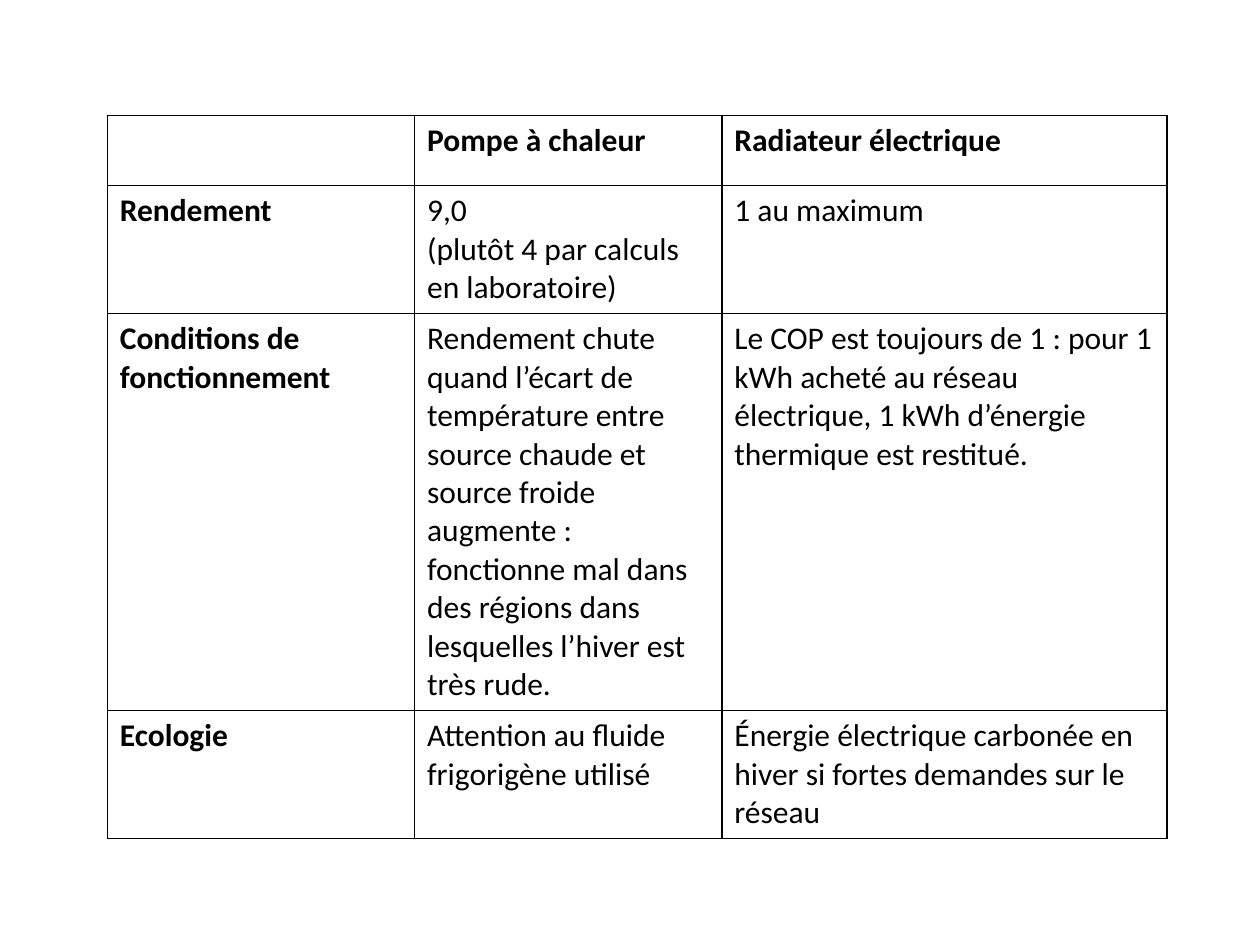
from lxml import etree
from pptx import Presentation
from pptx.dml.color import RGBColor
from pptx.oxml import ns
from pptx.util import Pt

COLOURS = {"ink": "000000", "paper": "FFFFFF"}
FONT = "Calibri"
COLUMN_SHARES = (0.29, 0.29, 0.42)
ROW_HEIGHT = 40

COMPARISON = [
    ["", "Pompe à chaleur", "Radiateur électrique"],
    ["Rendement", "9,0\n(plutôt 4 par calculs en laboratoire)", "1 au maximum"],
    [
        "Conditions de fonctionnement",
        "Rendement chute quand l’écart de température entre source chaude et "
        "source froide augmente : fonctionne mal dans des régions dans "
        "lesquelles l’hiver est très rude.",
        "Le COP est toujours de 1 : pour 1 kWh acheté au réseau électrique, "
        "1 kWh d’énergie thermique est restitué.",
    ],
    [
        "Ecologie",
        "Attention au fluide frigorigène utilisé",
        "Énergie électrique carbonée en hiver si fortes demandes sur le réseau",
    ],
]


def add_borders(cell):
    properties = cell._tc.get_or_add_tcPr()
    for index, side in enumerate(("a:lnL", "a:lnR", "a:lnT", "a:lnB")):
        line = etree.Element(ns.qn(side), w=str(Pt(1)))
        fill = etree.SubElement(line, ns.qn("a:solidFill"))
        etree.SubElement(fill, ns.qn("a:srgbClr"), val=COLOURS["ink"])
        properties.insert(index, line)


def write_cell(cell, content, bold):
    cell.fill.solid()
    cell.fill.fore_color.rgb = RGBColor.from_string(COLOURS["paper"])
    add_borders(cell)
    for index, line in enumerate(content.split("\n") if content else []):
        frame = cell.text_frame
        paragraph = frame.add_paragraph() if index else frame.paragraphs[0]
        run = paragraph.add_run()
        run.text = line
        run.font.name = FONT
        run.font.size = Pt(18)
        run.font.bold = bold
        run.font.color.rgb = RGBColor.from_string(COLOURS["ink"])


def add_comparison(slide, left, top, width, height):
    shape = slide.shapes.add_table(
        len(COMPARISON), len(COLUMN_SHARES), Pt(left), Pt(top), Pt(width), Pt(height)
    )
    table = shape.table
    table.first_row = False
    table.horz_banding = False
    for column, share in zip(table.columns, COLUMN_SHARES):
        column.width = Pt(width * share)
    for row_index, contents in enumerate(COMPARISON):
        table.rows[row_index].height = Pt(ROW_HEIGHT)
        for column_index, content in enumerate(contents):
            bold = row_index == 0 or column_index == 0
            write_cell(table.cell(row_index, column_index), content, bold)
    shape.height = Pt(height)


def main():
    presentation = Presentation()
    presentation.slide_width = Pt(720)
    presentation.slide_height = Pt(540)
    slide = presentation.slides.add_slide(presentation.slide_layouts[6])
    add_comparison(slide, 61.3, 66, 605.5, 407.5)
    presentation.save("out.pptx")


if __name__ == "__main__":
    main()
